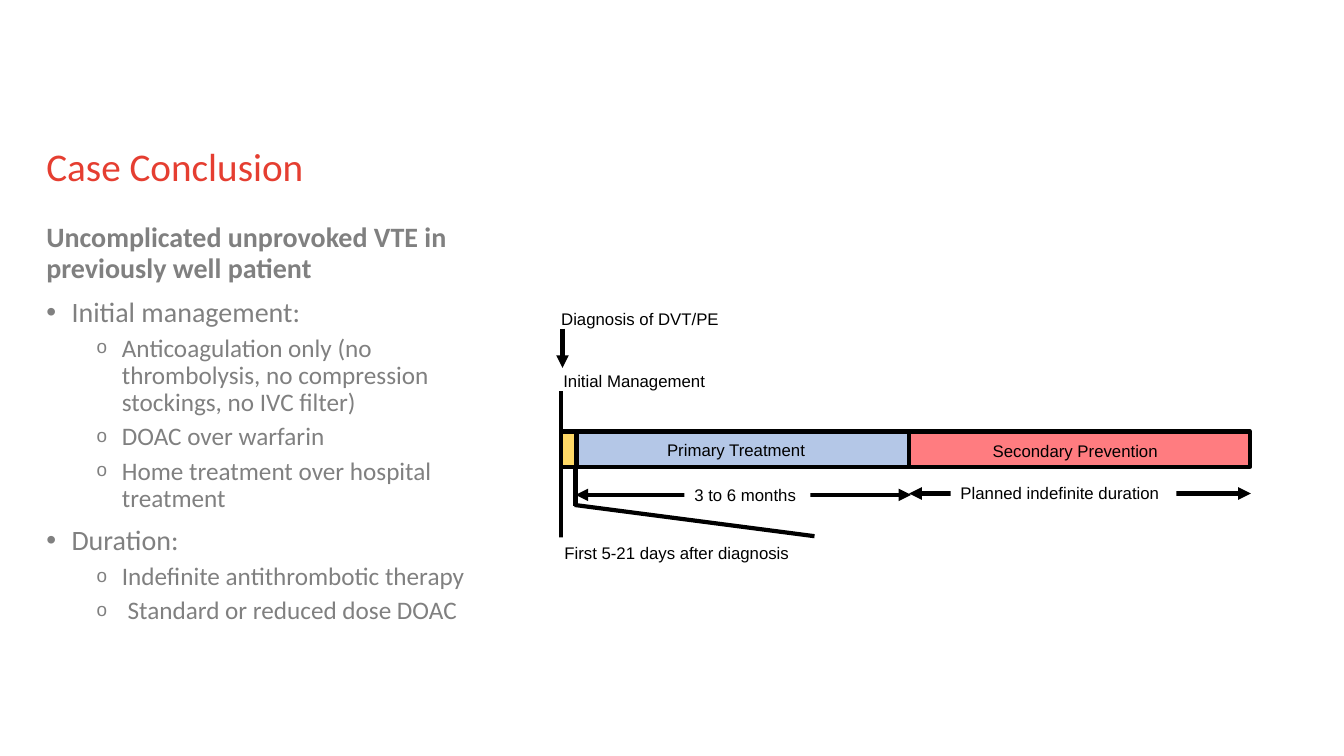
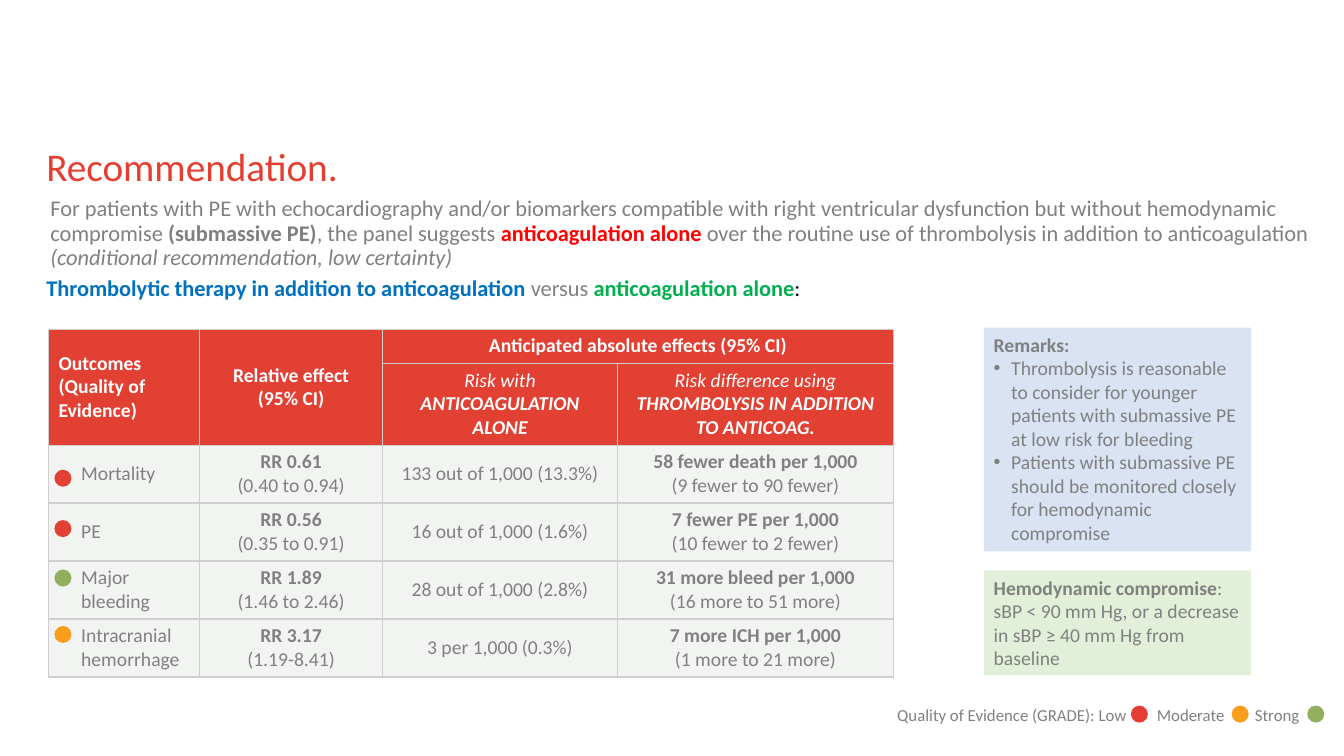
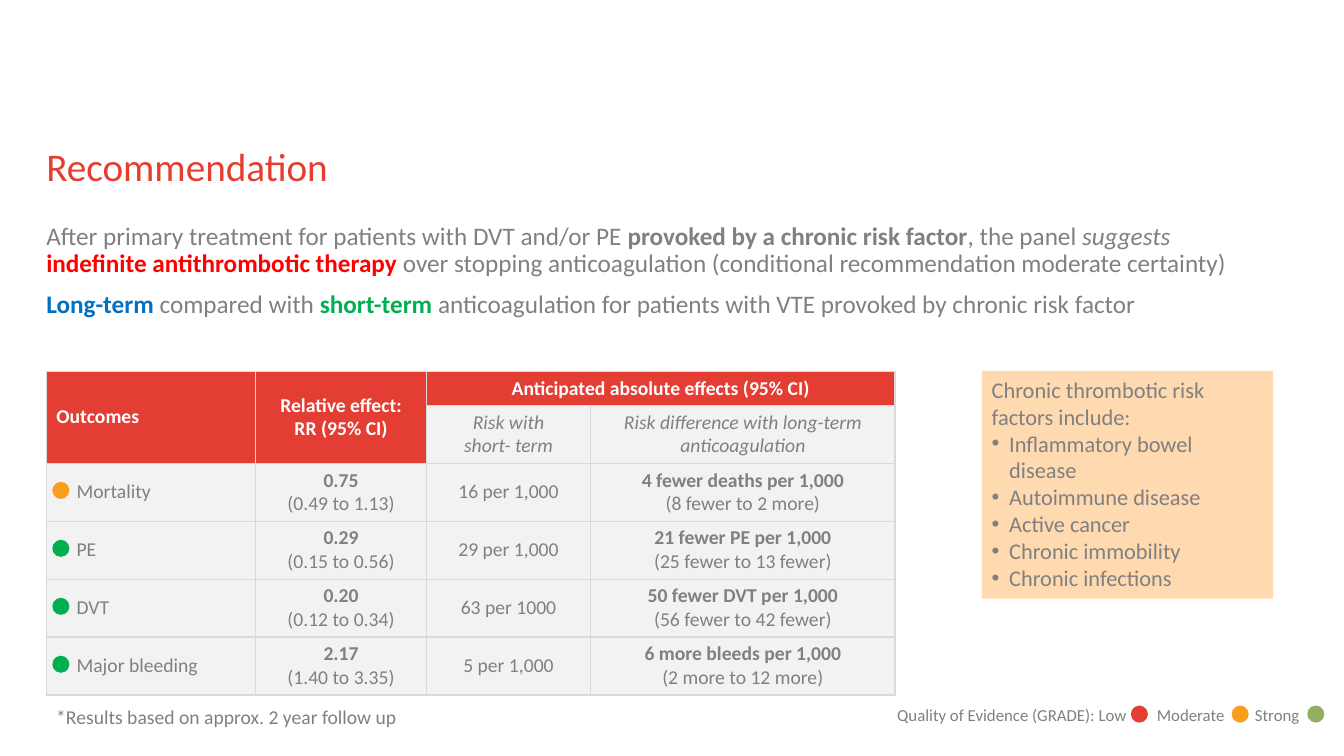
import dataclasses
import typing

import lxml.etree
import pptx
import pptx.dml.color
import pptx.enum.shapes
import pptx.enum.text
import pptx.oxml.ns
import pptx.util

Pt = pptx.util.Pt
RGB = pptx.dml.color.RGBColor
Align = pptx.enum.text.PP_ALIGN
Anchor = pptx.enum.text.MSO_ANCHOR
Kind = pptx.enum.shapes.MSO_SHAPE
qn = pptx.oxml.ns.qn

BLACK = RGB(0x00, 0x00, 0x00)
WHITE = RGB(0xFF, 0xFF, 0xFF)
GRAY = RGB(0x80, 0x80, 0x80)
TITLE = RGB(0xE5, 0x3E, 0x31)
BRICK = RGB(0xE1, 0x40, 0x33)
CORAL = RGB(0xE4, 0x3D, 0x33)
RED = RGB(0xFF, 0x00, 0x00)
BLUE = RGB(0x00, 0x70, 0xC0)
GREEN = RGB(0x00, 0xB0, 0x50)
AMBER = RGB(0xF9, 0x9D, 0x1C)
OLIVE = RGB(0x91, 0xAF, 0x5F)
SKY = RGB(0xB4, 0xC7, 0xE7)
ROSE = RGB(0xFF, 0x7C, 0x80)
GOLD = RGB(0xFF, 0xD9, 0x66)
ICE = RGB(0xDA, 0xE3, 0xF3)
MINT = RGB(0xE2, 0xF0, 0xD9)
PEACH = RGB(0xFF, 0xD9, 0xB0)
MIST = RGB(0xF2, 0xF4, 0xF2)
PALE = RGB(0xF2, 0xF2, 0xF2)
STONE = RGB(0xD0, 0xCE, 0xCE)
ASH = RGB(0xD9, 0xD9, 0xD9)

EDGE = 33.1
DOT = 12.2
LINE = 24.3
PAIR = 41.4
TRIO = 58.5


class Box(typing.NamedTuple):
    left: float
    top: float
    width: float
    height: float


class Run(typing.NamedTuple):
    text: str
    tint: RGB = GRAY
    bold: bool = False
    ital: bool = False


@dataclasses.dataclass(frozen=True)
class Para:
    runs: tuple
    size: float = 14
    align: Align = Align.LEFT
    gap: float = 0
    lines: float = 1
    mark: str = ""
    scale: int = 100
    left: float = 0
    hang: float = 0
    level: int = 0
    face: str = "Calibri"
    tabs: tuple = ()


class Head(typing.NamedTuple):
    row: int
    col: int
    paras: tuple
    tint: RGB
    rows: int = 1
    cols: int = 1


class Result(typing.NamedTuple):
    name: str
    ratio: str
    range: str
    base: str
    shift: str
    span: str
    tint: RGB
    top: float


class Grid(typing.NamedTuple):
    left: float
    top: float
    cols: tuple
    rows: tuple
    heads: tuple
    data: tuple
    tint: RGB
    rule: RGB
    inset: float
    dot: float


class Stroke(typing.NamedTuple):
    x1: float
    y1: float
    x2: float
    y2: float
    start: bool = False
    end: bool = False


def child(node, tag: str, **attrs: str):
    return lxml.etree.SubElement(node, qn(tag), **attrs)


def plain(text: str, size: float = 14, **opts) -> Para:
    return Para((Run(text),), size, **opts)


def strong(text: str, tint: RGB = GRAY, **opts) -> Para:
    return Para((Run(text, tint, True),), **opts)


def write(frame, paras: typing.Iterable[Para], inset: typing.Optional[float] = None) -> None:
    frame.word_wrap = True
    frame.auto_size = pptx.enum.text.MSO_AUTO_SIZE.NONE
    frame.vertical_anchor = Anchor.TOP
    if inset is not None:
        frame.margin_left = frame.margin_right = Pt(inset)
        frame.margin_top = frame.margin_bottom = Pt(inset)
    fill(frame, paras)


def fill(frame, paras: typing.Iterable[Para]) -> None:
    for n, item in enumerate(paras):
        para = frame.add_paragraph() if n else frame.paragraphs[0]
        para.alignment = item.align
        para.level = item.level
        if item.lines != 1:
            para.line_spacing = item.lines
        para.space_before = Pt(item.gap if n else 0)
        props = para._p.get_or_add_pPr()
        if item.mark:
            props.set("marL", str(Pt(item.left)))
            props.set("indent", str(Pt(-item.hang)))
            child(props, "a:buSzPct", val=str(item.scale * 1000))
            child(props, "a:buFont", typeface="Arial")
            child(props, "a:buChar", char=item.mark)
        if item.tabs:
            stops = child(props, "a:tabLst")
            for stop in item.tabs:
                child(stops, "a:tab", pos=str(Pt(stop)), algn="l")
        for part in item.runs:
            for k, text in enumerate(part.text.split("\n")):
                if k:
                    para.add_line_break()
                run = para.add_run()
                run.text = text
                font = run.font
                font.name, font.size = item.face, Pt(item.size)
                font.bold, font.italic = part.bold, part.ital
                font.color.rgb = part.tint


def label(slide, box: Box, paras: typing.Iterable[Para], inset: typing.Optional[float] = None) -> None:
    write(slide.shapes.add_textbox(*map(Pt, box)).text_frame, paras, inset)


def shape(slide, kind: Kind, box: Box, tint: RGB, paras: tuple = (), line: float = 0) -> None:
    item = slide.shapes.add_shape(kind, *map(Pt, box))
    item.shadow.inherit = False
    item.fill.solid()
    item.fill.fore_color.rgb = tint
    if line:
        item.line.color.rgb = BLACK
        item.line.width = Pt(line)
    else:
        item.line.fill.background()
    if paras:
        write(item.text_frame, paras)


def dot(slide, left: float, top: float, tint: RGB) -> None:
    shape(slide, Kind.OVAL, Box(left, top, DOT, DOT), tint)


def draw(slide, mark: Stroke) -> None:
    ends = map(Pt, (mark.x1, mark.y1, mark.x2, mark.y2))
    item = slide.shapes.add_connector(pptx.enum.shapes.MSO_CONNECTOR.STRAIGHT, *ends)
    item.line.color.rgb = BLACK
    item.line.width = Pt(3)
    line = item.line._get_or_add_ln()
    if mark.start:
        child(line, "a:headEnd", type="triangle")
    if mark.end:
        child(line, "a:tailEnd", type="triangle")
    child(item._element.spPr, "a:effectLst")


def start(deck, text: str):
    slide = deck.slides.add_slide(deck.slide_layouts[5])
    title = slide.shapes.title
    title.left, title.top, title.width, title.height = map(Pt, (EDGE, 105.8, 864, 33.1))
    write(title.text_frame, (Para((Run(text, TITLE),), 28, lines=0.9),), 0)
    return slide


def legend(slide) -> None:
    text = "Quality of Evidence (GRADE): Low\tModerate\tStrong"
    label(slide, Box(633.8, 499.7, 326.2, 21.6), (plain(text, 12, tabs=(185.5, 255.5)),))
    for left, tint in ((807.8, CORAL), (879.8, AMBER), (933.8, OLIVE)):
        dot(slide, left, 504, tint)


def table(slide, grid: Grid) -> None:
    count = len(grid.rows), len(grid.cols)
    box = Box(grid.left, grid.top, sum(grid.cols), sum(grid.rows))
    tab = slide.shapes.add_table(*count, *map(Pt, box)).table
    tab.first_row = tab.horz_banding = False
    for col, width in zip(tab.columns, grid.cols):
        col.width = Pt(width)
    for row, height in zip(tab.rows, grid.rows):
        row.height = Pt(height)
    for cell in tab.iter_cells():
        props = cell._tc.get_or_add_tcPr()
        for side in ("a:lnL", "a:lnR", "a:lnT", "a:lnB"):
            line = child(props, side, w=str(Pt(1)))
            child(child(line, "a:solidFill"), "a:srgbClr", val=str(grid.rule))
        cell.vertical_anchor = Anchor.MIDDLE
        cell.fill.solid()
        cell.fill.fore_color.rgb = grid.tint
    for head in grid.heads:
        cell = tab.cell(head.row, head.col)
        for r in range(head.rows):
            for c in range(head.cols):
                tab.cell(head.row + r, head.col + c).fill.fore_color.rgb = head.tint
        if head.rows * head.cols > 1:
            cell.merge(tab.cell(head.row + head.rows - 1, head.col + head.cols - 1))
        fill(cell.text_frame, head.paras)
    mid = Align.CENTER
    for r, item in enumerate(grid.data, 2):
        cells = (
            (plain(item.name),),
            (strong(item.ratio, align=mid), plain(item.range, align=mid)),
            (plain(item.base, align=mid),),
            (strong(item.shift, align=mid), plain(item.span, align=mid)),
        )
        for c, paras in enumerate(cells):
            fill(tab.cell(r, c).text_frame, paras)
        tab.cell(r, 0).margin_left = Pt(grid.inset)
        dot(slide, grid.dot, item.top, item.tint)


def heads(tint: RGB, first: tuple, second: tuple, third: Para, fourth: Para, under: RGB) -> tuple:
    mid = Align.CENTER
    return (
        Head(0, 0, tuple(strong(text, WHITE) for text in first), tint, rows=2),
        Head(0, 1, tuple(strong(text, WHITE, align=mid) for text in second), tint, rows=2),
        Head(0, 2, (strong("Anticipated absolute effects (95% CI)", WHITE, align=mid),), tint, cols=2),
        Head(1, 2, (third,), under),
        Head(1, 3, (fourth,), under),
    )


def case(deck) -> None:
    slide = start(deck, "Case Conclusion")

    def point(text: str) -> Para:
        return plain(text, 20, gap=10, lines=0.9, mark="•", left=18, hang=18)

    def sub(text: str) -> Para:
        return plain(text, 18, gap=5, lines=0.9, mark="o", scale=75, left=54, hang=18, level=1)

    label(slide, Box(EDGE, 159.8, 326.9, 311), (
        strong("Uncomplicated unprovoked VTE in previously well patient", size=20, lines=0.9),
        point("Initial management:"),
        sub("Anticoagulation only (no thrombolysis, no compression stockings, no IVC filter)"),
        sub("DOAC over warfarin"),
        sub("Home treatment over hospital treatment"),
        point("Duration:"),
        sub("Indefinite antithrombotic therapy"),
        sub(" Standard or reduced dose DOAC"),
    ), 0)

    def note(text: str) -> tuple:
        return (Para((Run(text, BLACK),), 12, face="Arial"),)

    for left, width, tint in ((411.8, 238.3, SKY), (649.4, 243.4, ROSE), (401, 10.8, GOLD)):
        shape(slide, Kind.RECTANGLE, Box(left, 308.2, width, 25.2), tint, line=3)
    for left, top, width, text in (
        (469.4, 310.3, 117.4, "Primary Treatment"),
        (702, 311, 136.8, "Secondary Prevention"),
        (395.3, 261.4, 119.5, "Initial Management"),
        (393.8, 216.7, 131.8, "Diagnosis of DVT/PE"),
    ):
        label(slide, Box(left, top, width, 31), note(text))
    for mark in (
        Stroke(401, 308.2, 401, 279.4),
        Stroke(411.8, 308.2, 411.8, 307.4),
        Stroke(401.8, 234.7, 401.8, 262.8, end=True),
        Stroke(411.1, 353.5, 650.9, 353.5, True, True),
        Stroke(649.4, 352.5, 893.5, 352.5, True, True),
        Stroke(401, 332.6, 401, 385.9),
        Stroke(411.1, 333.4, 411.1, 361.4),
    ):
        draw(slide, mark)
    for left, top, width, text in (
        (488.9, 342.7, 90, "3 to 6 months"),
        (679, 341.3, 161.3, "Planned indefinite duration"),
        (396, 383.8, 181.4, "First 5-21 days after diagnosis"),
    ):
        shape(slide, Kind.RECTANGLE, Box(left, top, width, 31), WHITE, note(text))
    draw(slide, Stroke(410.4, 360.7, 581.8, 383))


def lysis(deck) -> None:
    slide = start(deck, "Recommendation.")
    label(slide, Box(36, 141.1, 909.4, 104.4), (Para((
        Run("For patients with PE with echocardiography and/or biomarkers compatible with right ventricular dysfunction but without hemodynamic compromise "),
        Run("(submassive PE)", bold=True),
        Run(", the panel suggests "),
        Run("anticoagulation alone ", RED, True),
        Run("over the routine use of thrombolysis in addition to anticoagulation "),
        Run("(conditional recommendation, low certainty)", ital=True),
    ), 16, lines=0.9),), 0)
    third = Para((
        Run("Risk with\n", WHITE, ital=True),
        Run("ANTICOAGULATION ALONE", WHITE, True, True),
    ), align=Align.CENTER)
    fourth = Para((
        Run("Risk difference using ", WHITE, ital=True),
        Run("THROMBOLYSIS IN ADDITION\nTO ANTICOAG.", WHITE, True, True),
    ), align=Align.CENTER)
    table(slide, Grid(
        34.6, 235.2, (108, 130.7, 167.8, 197.2), (LINE, TRIO) + (PAIR,) * 4,
        heads(BRICK, ("Outcomes", "(Quality of Evidence)"),
              ("Relative effect", "(95% CI)"), third, fourth, BRICK),
        (
            Result("Mortality", "RR 0.61", "(0.40 to 0.94)", "133 out of 1,000 (13.3%)",
                   "58 fewer death per 1,000", "(9 fewer to 90 fewer)", BRICK, 335.5),
            Result("PE", "RR 0.56", "(0.35 to 0.91)", "16 out of 1,000 (1.6%)",
                   "7 fewer PE per 1,000", "(10 fewer to 2 fewer)", BRICK, 371.5),
            Result("Major bleeding", "RR 1.89", "(1.46 to 2.46)", "28 out of 1,000 (2.8%)",
                   "31 more bleed per 1,000", "(16 more to 51 more)", OLIVE, 406.8),
            Result("Intracranial hemorrhage", "RR 3.17", "(1.19-8.41)", "3 per 1,000 (0.3%)",
                   "7 more ICH per 1,000", "(1 more to 21 more)", AMBER, 447.1),
        ), MIST, STONE, 23.4, 38.9))
    label(slide, Box(EDGE, 195.8, 829.4, 19.4), (Para((
        Run("Thrombolytic therapy in addition to anticoagulation ", BLUE, True),
        Run("versus "),
        Run("anticoagulation alone", GREEN, True),
        Run(":", BLACK),
    ), 16),), 0)
    shape(slide, Kind.RECTANGLE, Box(702.7, 234, 190.8, 159.8), ICE, (
        strong("Remarks:"),
        plain("Thrombolysis is reasonable to consider for younger patients with submassive PE at low risk for bleeding",
              mark="•", left=12.5, hang=12.5),
        plain("Patients with submassive PE should be monitored closely for hemodynamic compromise",
              mark="•", left=12.5, hang=12.5),
    ))
    shape(slide, Kind.RECTANGLE, Box(702.7, 407.5, 190.8, 74.9), MINT, (Para((
        Run("Hemodynamic compromise", bold=True),
        Run(": sBP < 90 mm Hg, or a decrease in sBP ≥ 40 mm Hg from baseline"),
    )),))
    legend(slide)


def term(deck) -> None:
    slide = start(deck, "Recommendation")
    label(slide, Box(EDGE, 159.8, 864, 311), (
        Para((
            Run("After primary treatment for patients with DVT and/or PE "),
            Run("provoked by a chronic risk factor", bold=True),
            Run(", the panel "),
            Run("suggests ", ital=True),
            Run("indefinite antithrombotic therapy ", RED, True),
            Run("over stopping anticoagulation (conditional recommendation moderate certainty)"),
        ), 18, lines=0.9),
        Para((
            Run("Long-term ", BLUE, True),
            Run("compared with "),
            Run("short-term", GREEN, True),
            Run(" anticoagulation for patients with VTE provoked by chronic risk factor"),
        ), 18, gap=10, lines=0.9),
    ), 0)
    third, fourth = (
        Para((Run(text, ital=True),), align=Align.CENTER)
        for text in ("Risk with\nshort- term", "Risk difference with long-term anticoagulation")
    )
    tops = [344.2 + PAIR * n for n in range(4)]
    table(slide, Grid(
        EDGE, 265.2, (149.6, 121.9, 117.4, 217.4), (LINE,) + (PAIR,) * 5,
        heads(CORAL, ("Outcomes",), ("Relative effect:", "RR (95% CI)"), third, fourth, PALE),
        (
            Result("Mortality", "0.75", "(0.49 to 1.13)", "16 per 1,000",
                   "4 fewer deaths per 1,000", "(8 fewer to 2 more)", AMBER, tops[0]),
            Result("PE", "0.29", "(0.15 to 0.56)", "29 per 1,000",
                   "21 fewer PE per 1,000", "(25 fewer to 13 fewer)", GREEN, tops[1]),
            Result("DVT", "0.20", "(0.12 to 0.34)", "63 per 1000",
                   "50 fewer DVT per 1,000", "(56 fewer to 42 fewer)", GREEN, tops[2]),
            Result("Major bleeding", "2.17", "(1.40 to 3.35)", "5 per 1,000",
                   "6 more bleeds per 1,000", "(2 more to 12 more)", GREEN, tops[3]),
        ), PALE, ASH, 21.6, 37.4))
    legend(slide)
    risks = ("Inflammatory bowel disease", "Autoimmune disease", "Active cancer",
             "Chronic immobility", "Chronic infections")
    shape(slide, Kind.RECTANGLE, Box(701.3, 265, 208.1, 162.7), PEACH, (
        plain("Chronic thrombotic risk factors include:", 16),
        *(plain(risk, 16, mark="•", left=12.5, hang=12.5) for risk in risks),
    ))
    label(slide, Box(EDGE, 499.7, 542.9, 24.5), (plain("*Results based on approx. 2 year follow up"),))


def main() -> None:
    deck = pptx.Presentation()
    deck.slide_width, deck.slide_height = Pt(960), Pt(540)
    for build in (case, lysis, term):
        build(deck)
    deck.save("out.pptx")


if __name__ == "__main__":
    main()
